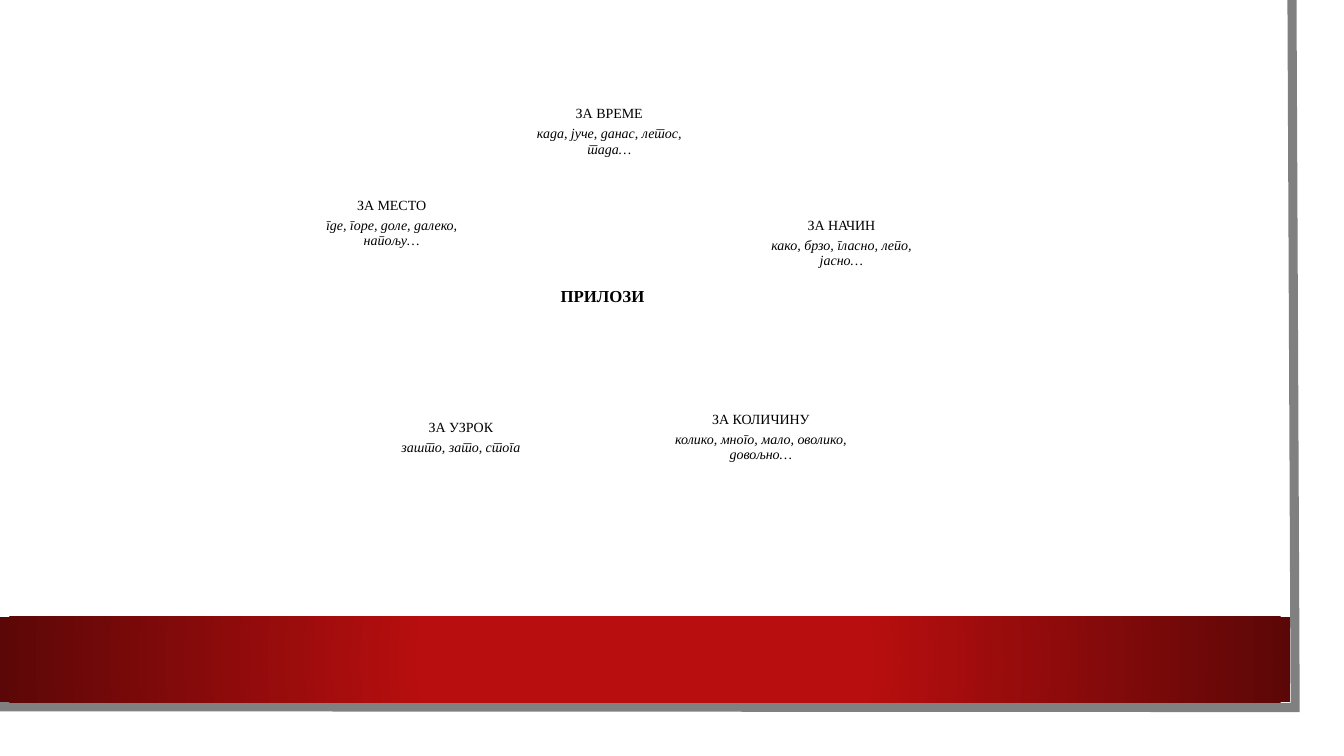
from dataclasses import dataclass

from lxml import etree
from pptx import Presentation
from pptx import util as u
from pptx.dml.color import RGBColor
from pptx.enum import lang, shapes, text
from pptx.oxml import ns

COLORS = {
    "paper": "FFFFFF",
    "ink": "000000",
    "frame": "808080",
    "red": "B80E0F",
    "dark_red": "5C0707",
}
FONT = "Times New Roman"


@dataclass
class Area:
    left: float
    top: float
    width: float
    height: float

    def lengths(self) -> list:
        return [u.Cm(n) for n in (self.left, self.top, self.width, self.height)]


@dataclass
class Bubble:
    area: Area
    heading: str
    examples: str


PAPER = Area(0, 0, 33.27, 18.47)
BAND = Area(0, 15.54, 32.51, 2.16)
FRAME = [(32.56, 0), (32.64, 17.83), (-0.08, 17.81)]
CENTRE = Area(12.37, 5.59, 5.66, 3.76)
TITLE = Area(13.18, 6.15, 4.01, 2.67)
BUBBLES = [
    Bubble(Area(6.86, 3.33, 6.02, 4.62), "ЗА МЕСТО", "где, горе, доле, далеко, напољу…"),
    Bubble(Area(12.6, 1.32, 5.51, 4.01), "ЗА ВРЕМЕ", "када, јуче, данас, летос, тада…"),
    Bubble(Area(18.03, 3.78, 6.35, 4.7), "ЗА НАЧИН", "како, брзо, гласно, лепо, јасно…"),
    Bubble(Area(8.59, 8.81, 6.05, 4.45), "ЗА УЗРОК", "зашто, зато, стога"),
    Bubble(Area(15.85, 8.79, 6.65, 4.47), "ЗА КОЛИЧИНУ",
           "колико, много, мало, оволико, довољно…"),
]


def color(name: str) -> RGBColor:
    return RGBColor.from_string(COLORS[name])


def add_plain(page, kind, area: Area):
    """Add a white shape without line or shadow."""
    shape = page.shapes.add_shape(kind, *area.lengths())
    shape.shadow.inherit = False
    shape.fill.solid()
    shape.fill.fore_color.rgb = color("paper")
    shape.line.fill.background()
    return shape


def write(shape, lines: list, size: float, inset: float) -> None:
    """Fill a shape with centred Serbian text."""
    frame = shape.text_frame
    frame.text = "\n".join(lines)
    frame.word_wrap = True
    frame.auto_size = text.MSO_AUTO_SIZE.NONE
    frame.vertical_anchor = text.MSO_ANCHOR.MIDDLE
    frame.margin_left = frame.margin_right = u.Cm(inset)
    frame.margin_top = frame.margin_bottom = u.Cm(inset)
    for para in frame.paragraphs:
        para.alignment = text.PP_ALIGN.CENTER
        para.line_spacing = 0.9
        para.space_before = u.Pt(0)
        para.space_after = u.Pt(size * 0.35)
        for span in para.runs:
            span.font.name = FONT
            span.font.size = u.Pt(size)
            span.font.color.rgb = color("ink")
            span.font.language_id = lang.MSO_LANGUAGE_ID.SERBIAN_CYRILLIC


def add_backdrop(page) -> None:
    add_plain(page, shapes.MSO_SHAPE.RECTANGLE, PAPER)

    # Grey edge on the right and at the bottom
    points = [(u.Cm(x), u.Cm(y)) for x, y in FRAME]
    builder = page.shapes.build_freeform(*points[0])
    builder.add_line_segments(points[1:], close=False)
    edge = builder.convert_to_shape()
    edge.shadow.inherit = False
    edge.fill.background()
    edge.line.color.rgb = color("frame")
    edge.line.width = u.Pt(6.5)
    etree.SubElement(edge.line._ln, ns.qn("a:miter"), lim="800000")

    # Red band, darker away from its centre
    band = add_plain(page, shapes.MSO_SHAPE.RECTANGLE, BAND)
    band.fill.gradient()
    for stop, name, position in zip(band.fill.gradient_stops, ("red", "dark_red"), (0.34, 1)):
        stop.color.rgb = color(name)
        stop.position = position
    linear = band._element.spPr.find(".//" + ns.qn("a:lin"))
    radial = etree.Element(ns.qn("a:path"), path="circle")
    etree.SubElement(radial, ns.qn("a:fillToRect"), l="50000", t="50000", r="50000", b="50000")
    linear.getparent().replace(linear, radial)


def add_title(page) -> None:
    add_plain(page, shapes.MSO_SHAPE.OVAL, CENTRE)
    title = page.shapes.title
    title.left, title.top, title.width, title.height = TITLE.lengths()
    write(title, ["ПРИЛОЗИ"], 12, 0.05)
    title.text_frame.paragraphs[0].runs[0].font.bold = True
    page.shapes._spTree.append(title._element)  # bring to the front


def add_bubble(page, bubble: Bubble) -> None:
    oval = add_plain(page, shapes.MSO_SHAPE.OVAL, bubble.area)
    write(oval, [bubble.heading, bubble.examples], 10, 0.03)
    oval.text_frame.paragraphs[1].runs[0].font.italic = True


def main() -> None:
    deck = Presentation()
    deck.slide_width, deck.slide_height = u.Cm(33.87), u.Cm(19.05)
    page = deck.slides.add_slide(deck.slide_layouts[5])
    add_backdrop(page)
    add_title(page)
    for bubble in BUBBLES:
        add_bubble(page, bubble)
    deck.save("out.pptx")


if __name__ == "__main__":
    main()
